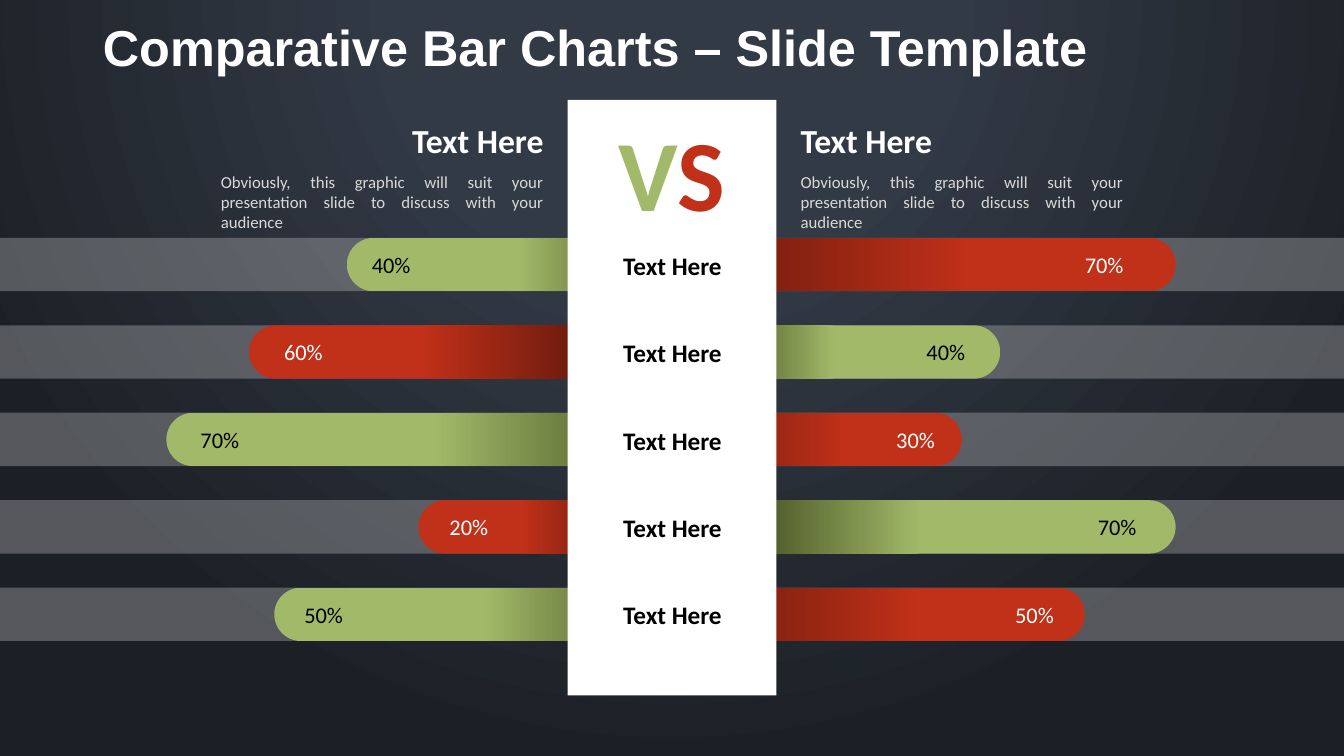
from dataclasses import dataclass

import pptx
import pptx.dml.color
import pptx.enum.shapes
import pptx.enum.text
import pptx.oxml
import pptx.oxml.ns
import pptx.util
from pptx.util import Inches

ALIGN = pptx.enum.text.PP_ALIGN
ANCHOR = pptx.enum.text.MSO_ANCHOR
SHAPE = pptx.enum.shapes.MSO_SHAPE


@dataclass(frozen=True)
class Theme:
    """Colours, fonts and type sizes of the slide."""
    white: str = "FFFFFF"
    black: str = "000000"
    grey: str = "D9D9D9"
    green: str = "A2B969"
    dark_green: str = "54632E"
    red: str = "C13018"
    dark_red: str = "60180C"
    back: str = "323A45"
    back_edge: str = "1C2026"
    title_font: str = "Arial"
    body_font: str = "Calibri"
    title: int = 36
    versus: int = 72
    heading: int = 24
    category: int = 18
    value: int = 16
    note: int = 12


T = Theme()
SLIDE_W, SLIDE_H = 13.33, 7.5
MIDDLE = 6.64
ROW_TOP, ROW_STEP, ROW_H = 2.36, 0.8675, 0.53
VALUE_W, VALUE_H = 1.54, 0.37
NOTE = ("Obviously, this graphic will suit your presentation slide "
        "to discuss with your audience")

# Bar start, value left edge, value; bar end, value right edge, value
ROWS = [
    (3.44, 3.59, "40%", 11.66, 11.24, "70%"),
    (2.47, 2.72, "60%", 9.92, 9.67, "40%"),
    (1.65, 1.89, "70%", 9.54, 9.37, "30%"),
    (4.15, 4.36, "20%", 11.66, 11.37, "70%"),
    (2.72, 2.92, "50%", 10.76, 10.55, "50%"),
]
LEFT_GREEN = ((0.53, T.green), (0.92, T.dark_green))
LEFT_RED = ((0.41, T.red), (0.84, T.dark_red))
RIGHT_GREEN = ((0.5, T.green), (0.79, T.dark_green))
RIGHT_RED = ((0.4, T.red), (1, T.dark_red))


def rgb(code):
    """Return the colour object for a hex code."""
    return pptx.dml.color.RGBColor.from_string(code)


def set_gradient(fill, stops):
    """Give a fill two gradient stops."""
    fill.gradient()
    for stop, (position, color) in zip(fill.gradient_stops, stops):
        stop.position = position
        stop.color.rgb = rgb(color)


def set_background(s):
    """Fill the background with a circular gradient."""
    set_gradient(s.background.fill, ((0.35, T.back), (1, T.back_edge)))
    grad = s.element.find(".//" + pptx.oxml.ns.qn("a:gradFill"))
    grad.remove(grad.find(pptx.oxml.ns.qn("a:lin")))
    grad.append(pptx.oxml.parse_xml(
        f'<a:path {pptx.oxml.ns.nsdecls("a")} path="circle">'
        '<a:fillToRect l="50000" t="-80000" r="50000" b="180000"/></a:path>'))


def add_run(p, text, size, color, bold=False, font=T.body_font):
    """Add one formatted run."""
    r = p.add_run()
    r.text = text
    r.font.size = pptx.util.Pt(size)
    r.font.name = font
    r.font.bold = bold
    r.font.color.rgb = rgb(color)


def add_text(shapes, box, runs, align=ALIGN.LEFT, anchor=ANCHOR.TOP, side=0.1):
    """Add a text box with one paragraph of runs."""
    tf = shapes.add_textbox(*map(Inches, box)).text_frame
    tf.word_wrap = True
    tf.auto_size = pptx.enum.text.MSO_AUTO_SIZE.SHAPE_TO_FIT_TEXT
    tf.vertical_anchor = anchor
    tf.margin_left = tf.margin_right = Inches(side)
    p = tf.paragraphs[0]
    p.alignment = align
    for run in runs:
        add_run(p, *run)


def add_block(s, kind, box):
    """Add a preset shape without line or shadow."""
    sp = s.shapes.add_shape(kind, *map(Inches, box))
    sp.shadow.inherit = False
    sp.line.fill.background()
    return sp


def add_rect(s, box, color, opacity=100):
    """Add a plain rectangle, see-through if asked."""
    sp = add_block(s, SHAPE.RECTANGLE, box)
    sp.fill.solid()
    sp.fill.fore_color.rgb = rgb(color)
    if opacity < 100:
        clr = sp.fill._xPr.find(".//" + pptx.oxml.ns.qn("a:srgbClr"))
        clr.append(pptx.oxml.parse_xml(
            f'<a:alpha {pptx.oxml.ns.nsdecls("a")} val="{opacity * 1000}"/>'))


def add_bar(s, x1, x2, y, stops, angle):
    """Add a round-ended bar that darkens toward the middle."""
    sp = add_block(s, SHAPE.ROUNDED_RECTANGLE, (x1, y, x2 - x1, ROW_H))
    sp.adjustments[0] = 0.5
    set_gradient(sp.fill, stops)
    sp.fill.gradient_angle = angle


def add_value(s, x, y, text, stops, align):
    """Add a percentage in the ink that suits its bar."""
    ink = T.black if stops in (LEFT_GREEN, RIGHT_GREEN) else T.white
    add_text(s.shapes, (x, y + 0.08, VALUE_W, VALUE_H),
             [(text, T.value, ink)], align, ANCHOR.MIDDLE)


def add_row(s, i, row):
    """Add a stripe with its two bars and values."""
    start, left_x, left, end, right_x, right = row
    y = ROW_TOP + i * ROW_STEP
    left_fill, right_fill = ((LEFT_GREEN, RIGHT_RED) if i % 2 == 0
                             else (LEFT_RED, RIGHT_GREEN))
    add_rect(s, (0, y, SLIDE_W, ROW_H), T.grey, 30)
    add_bar(s, start, MIDDLE, y, left_fill, 0)
    add_bar(s, MIDDLE, end, y, right_fill, 180)
    add_value(s, left_x, y, left, left_fill, ALIGN.LEFT)
    add_value(s, right_x - VALUE_W, y, right, right_fill, ALIGN.RIGHT)


def add_heading(s, x, align):
    """Add a grouped heading and note above one side."""
    shapes = s.shapes.add_group_shape().shapes
    add_text(shapes, (x, 1.14, 3.2, 0.5),
             [("Text Here", T.heading, T.white, True)], align, ANCHOR.BOTTOM, 0)
    add_text(shapes, (x, 1.65, 3.2, 0.71),
             [(NOTE, T.note, T.grey)], ALIGN.JUSTIFY, side=0)


def set_title(s, text):
    """Place and format the title placeholder."""
    sp = s.shapes.title
    sp.left, sp.top, sp.width, sp.height = map(Inches, (0.92, 0.18, 11.5, 0.81))
    tf = sp.text_frame
    tf.auto_size = pptx.enum.text.MSO_AUTO_SIZE.NONE
    tf.vertical_anchor = ANCHOR.TOP
    tf.margin_right = 0
    p = tf.paragraphs[0]
    p.alignment = ALIGN.LEFT
    p.line_spacing = 0.9
    add_run(p, text, T.title, T.white, True, T.title_font)


def main():
    """Build and save the slide."""
    prs = pptx.Presentation()
    prs.slide_width, prs.slide_height = Inches(SLIDE_W), Inches(SLIDE_H)
    s = prs.slides.add_slide(prs.slide_layouts[5])
    set_background(s)
    set_title(s, "Comparative Bar Charts – Slide Template")
    for i, row in enumerate(ROWS):
        add_row(s, i, row)
    add_rect(s, (5.63, 0.99, 2.07, 5.91), T.white)
    add_text(s.shapes, (6.03, 1.05, 1.27, 1.31),
             [("V", T.versus, T.green, True), ("S", T.versus, T.red, True)],
             ALIGN.CENTER)
    for i in range(len(ROWS)):
        add_text(s.shapes, (5.9, ROW_TOP + i * ROW_STEP + 0.07, 1.54, 0.4),
                 [("Text Here", T.category, T.black, True)],
                 ALIGN.CENTER, ANCHOR.MIDDLE, 0)
    add_heading(s, 7.94, ALIGN.LEFT)
    add_heading(s, 2.19, ALIGN.RIGHT)
    prs.save("out.pptx")


if __name__ == "__main__":
    main()
